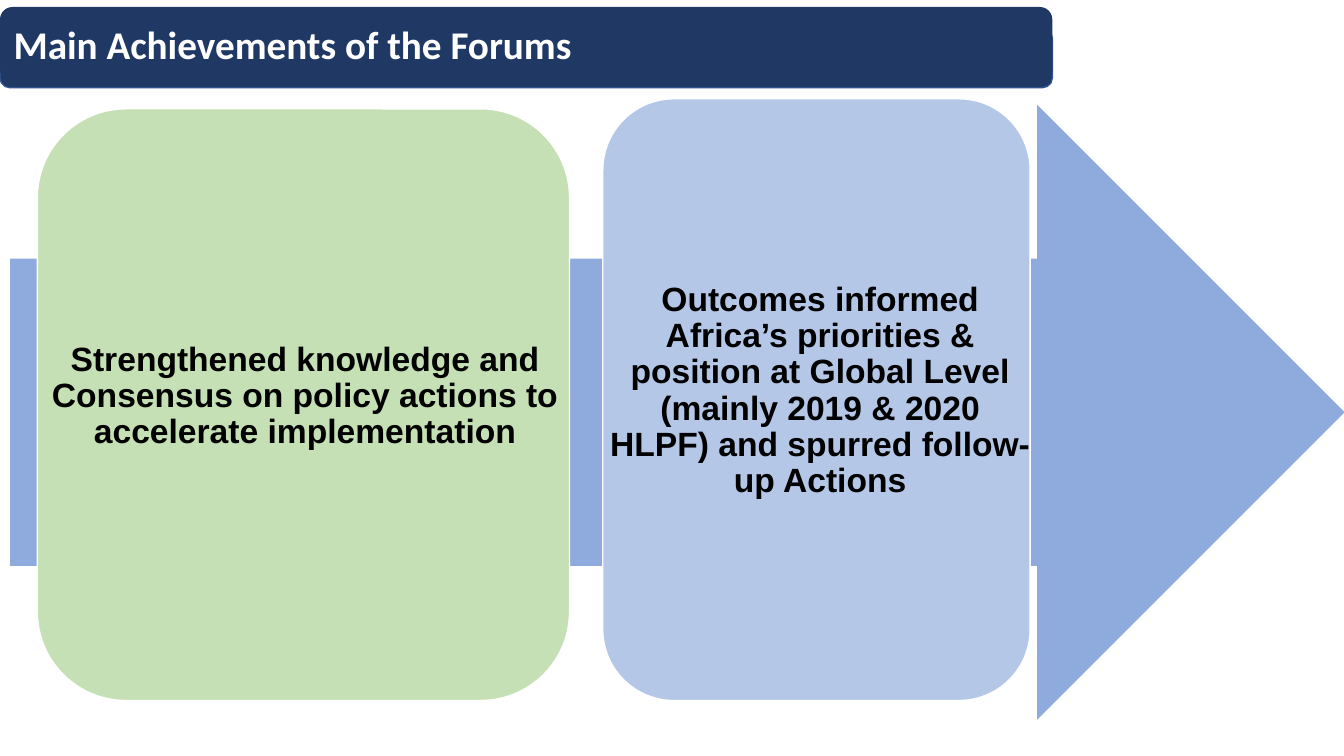
from pptx import Presentation
from pptx.dml.color import RGBColor
from pptx.enum.shapes import MSO_SHAPE
from pptx.enum.text import MSO_ANCHOR, PP_ALIGN
from pptx.util import Inches, Pt

ROUNDED, ARROW = MSO_SHAPE.ROUNDED_RECTANGLE, MSO_SHAPE.RIGHT_ARROW
MIDDLE, LEFT, CENTER = MSO_ANCHOR.MIDDLE, PP_ALIGN.LEFT, PP_ALIGN.CENTER
COLORS = {
    "navy": "203864", "edge": "325491", "arrow": "8FAADC", "green": "C5E0B4",
    "blue": "B4C7E7", "white": "FFFFFF", "black": "000000",
}

prs = Presentation()
prs.slide_width, prs.slide_height = Inches(13.33), Inches(7.5)
s = prs.slides.add_slide(prs.slide_layouts[6])


def add_box(kind, area, fill=None, line=None):
    """Add a preset shape, or a text box if kind is None; area is in percent of the slide."""
    sides = (prs.slide_width, prs.slide_height) * 2
    frame = [int(share * side / 100) for share, side in zip(area, sides)]
    if kind is None:
        return s.shapes.add_textbox(*frame)
    sp = s.shapes.add_shape(kind, *frame)
    sp.shadow.inherit = False
    sp.fill.solid()
    sp.fill.fore_color.rgb = RGBColor.from_string(COLORS[fill])
    if line:
        sp.line.color.rgb = RGBColor.from_string(COLORS[line])
        sp.line.width = Pt(1)
    else:
        sp.line.fill.background()
    return sp


def write(sp, text, inset, align, spacing, color, **font):
    tf = sp.text_frame
    tf.word_wrap = True
    tf.vertical_anchor = MIDDLE
    for side in ("left", "top", "right", "bottom"):
        setattr(tf, f"margin_{side}", Inches(inset))
    p = tf.paragraphs[0]
    p.alignment, p.line_spacing = align, spacing
    r = p.add_run()
    r.text = text
    r.font.color.rgb = RGBColor.from_string(COLORS[color])
    for name, value in font.items():
        setattr(r.font, name, value)


# Title bar
add_box(ROUNDED, (0, 3.73, 78.3, 7.87), "navy", "edge")
title = add_box(ROUNDED, (0, 0.93, 78.3, 9.87), "navy")
write(title, "Main Achievements of the Forums", 0.1, LEFT, 1.0, "white",
      name="Calibri", size=Pt(28), bold=True)

# Arrow with the achievement cards on top
add_box(ARROW, (0.75, 13.87, 99.3, 81.33), "arrow")
cards = [
    ("green", (2.78, 14.4, 39.6, 78.27), (2.78, 18.13, 39.83, 68.67),
     "Strengthened knowledge and Consensus on policy actions to accelerate implementation"),
    ("blue", (44.85, 13.07, 31.8, 79.6), (44.63, 9.07, 32.78, 85.33),
     "Outcomes informed Africa’s priorities & position at Global Level "
     "(mainly 2019 & 2020 HLPF) and spurred follow-up Actions"),
]
for fill, card_area, text_area, text in cards:
    add_box(ROUNDED, card_area, fill, "white")
    write(add_box(None, text_area), text, 0.07, CENTER, 0.9, "black",
          name="Arial", size=Pt(24), bold=True)

prs.save("out.pptx")
